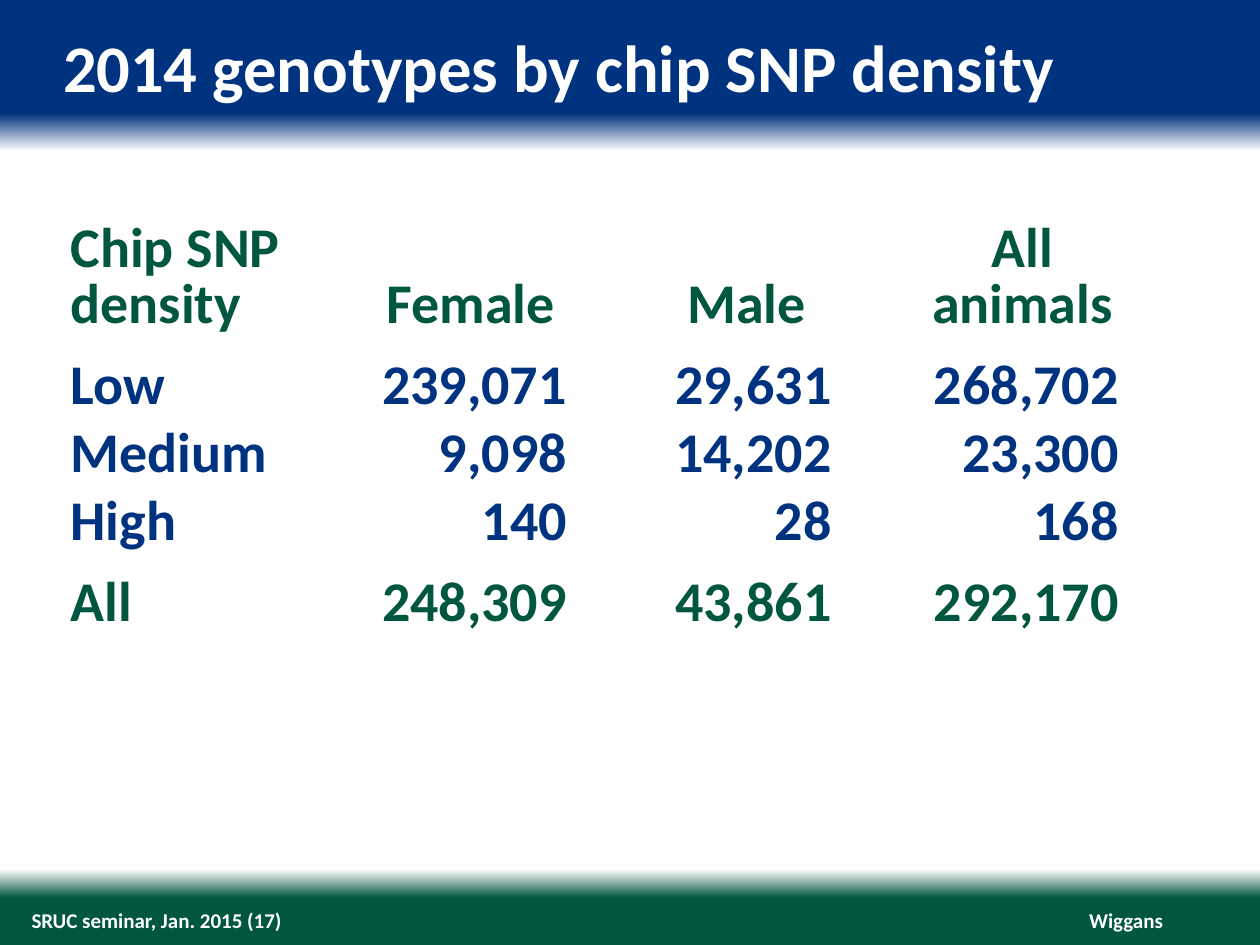
from dataclasses import dataclass

from lxml.etree import SubElement
from pptx import Presentation
from pptx.dml.color import RGBColor
from pptx.enum.text import MSO_ANCHOR, MSO_AUTO_SIZE, PP_ALIGN
from pptx.oxml.ns import qn
from pptx.util import Inches, Pt

WIDTH, HEIGHT = 10, 7.5
BLUE, GREEN, WHITE = "00337F", "00563F", "FFFFFF"
NO_STYLE = "{2D5ABB26-0587-4C30-8999-92F81FD0307C}"
BACKGROUND_STOPS = [(0, BLUE), (12, BLUE), (16, WHITE), (92, WHITE), (95, GREEN), (100, GREEN)]


@dataclass
class Area:
    left: float
    top: float
    width: float
    height: float

    def lengths(self) -> tuple:
        return (Inches(self.left * WIDTH), Inches(self.top * HEIGHT),
                Inches(self.width * WIDTH), Inches(self.height * HEIGHT))


@dataclass
class Column:
    share: float
    header: str
    header_inset: float
    number_inset: float


@dataclass
class Row:
    height: float
    color: str
    top_inset: float
    values: tuple


@dataclass
class Footer:
    area: Area
    text: str
    align: PP_ALIGN
    wrap: bool


COLUMNS = [
    Column(0.233, "Chip SNP density", 0.07, 0.07),
    Column(0.183, "Female", 0, 0.15),
    Column(0.225, "Male", 0.3, 0.3),
    Column(0.243, "All\nanimals", 0, 0.45),
]
HEADER_HEIGHT = 0.89
ROWS = [
    Row(0.64, BLUE, 0.1, ("Low", "239,071", "29,631", "268,702")),
    Row(0.54, BLUE, 0, ("Medium", "9,098", "14,202", "23,300")),
    Row(0.54, BLUE, 0, ("High", "140", "28", "168")),
    Row(0.64, GREEN, 0.1, ("All", "248,309", "43,861", "292,170")),
]
FOOTERS = [
    Footer(Area(0.025, 0.96, 0.742, 0.027), "SRUC seminar, Jan. 2015 (17)", PP_ALIGN.LEFT, True),
    Footer(Area(0.864, 0.96, 0.059, 0.027), "Wiggans", PP_ALIGN.RIGHT, False),
]


def rgb(color: str) -> RGBColor:
    return RGBColor.from_string(color)


def write(frame, text: str, *, size: float, color: str, align=PP_ALIGN.LEFT, spacing=None) -> None:
    frame.text = text
    for para in frame.paragraphs:
        para.alignment = align
        if spacing:
            para.line_spacing = Pt(spacing)
        for span in para.runs:
            span.font.name = "Calibri"
            span.font.size = Pt(size)
            span.font.bold = True
            span.font.color.rgb = rgb(color)


def set_insets(target, left=0.0, top=0.0, right=0.0) -> None:
    target.margin_left, target.margin_top = Inches(left), Inches(top)
    target.margin_right, target.margin_bottom = Inches(right), 0


def paint_background(page) -> None:
    fill = page.background.fill
    fill.gradient()
    fill.gradient_angle = 270
    stops = page.element.find(".//" + qn("a:gsLst"))
    for stop in list(stops):
        stops.remove(stop)
    for position, color in BACKGROUND_STOPS:
        stop = SubElement(stops, qn("a:gs"), pos=str(position * 1000))
        SubElement(stop, qn("a:srgbClr"), val=color)


def place_text(box, area: Area, text: str, *, anchor, wrap=True, **text_format) -> None:
    box.left, box.top, box.width, box.height = area.lengths()
    frame = box.text_frame
    set_insets(frame)
    frame.vertical_anchor = anchor
    frame.word_wrap = wrap
    frame.auto_size = MSO_AUTO_SIZE.SHAPE_TO_FIT_TEXT
    write(frame, text, color=WHITE, **text_format)


def fill_cell(cell, text: str, *, left=0.0, top=0.0, right=0.0, **text_format) -> None:
    cell.fill.background()
    cell.vertical_anchor = MSO_ANCHOR.BOTTOM
    set_insets(cell, left, top, right)
    write(cell.text_frame, text, size=32, **text_format)


def draw_table(page) -> None:
    area = Area(0.049, 0.24, sum(column.share for column in COLUMNS), 0.43)
    graphic = page.shapes.add_table(len(ROWS) + 1, len(COLUMNS), *area.lengths())
    graphic.element.find(".//" + qn("a:tableStyleId")).text = NO_STYLE
    table = graphic.table
    table.first_row = table.horz_banding = False
    table.rows[0].height = Inches(HEADER_HEIGHT)
    for index, column in enumerate(COLUMNS):
        is_label = index == 0
        table.columns[index].width = Inches(column.share * WIDTH)
        fill_cell(table.cell(0, index), column.header, left=column.header_inset,
                  right=column.number_inset if is_label else 0, color=GREEN, spacing=32,
                  align=PP_ALIGN.LEFT if is_label else PP_ALIGN.CENTER)
        for number, row in enumerate(ROWS, start=1):
            table.rows[number].height = Inches(row.height)
            fill_cell(table.cell(number, index), row.values[index],
                      left=column.number_inset if is_label else 0,
                      top=row.top_inset if is_label else 0,
                      right=column.number_inset, color=row.color,
                      align=PP_ALIGN.LEFT if is_label else PP_ALIGN.RIGHT)


def main() -> None:
    deck = Presentation()
    deck.slide_width, deck.slide_height = Inches(WIDTH), Inches(HEIGHT)
    page = deck.slides.add_slide(deck.slide_layouts[5])
    paint_background(page)
    for footer in FOOTERS:
        box = page.shapes.add_textbox(*footer.area.lengths())
        place_text(box, footer.area, footer.text, anchor=MSO_ANCHOR.MIDDLE,
                   wrap=footer.wrap, size=12, align=footer.align)
    place_text(page.shapes.title, Area(0.05, 0.027, 0.9, 0.085),
               "2014 genotypes by chip SNP density", anchor=MSO_ANCHOR.TOP, size=38)
    draw_table(page)
    deck.save("out.pptx")


if __name__ == "__main__":
    main()
